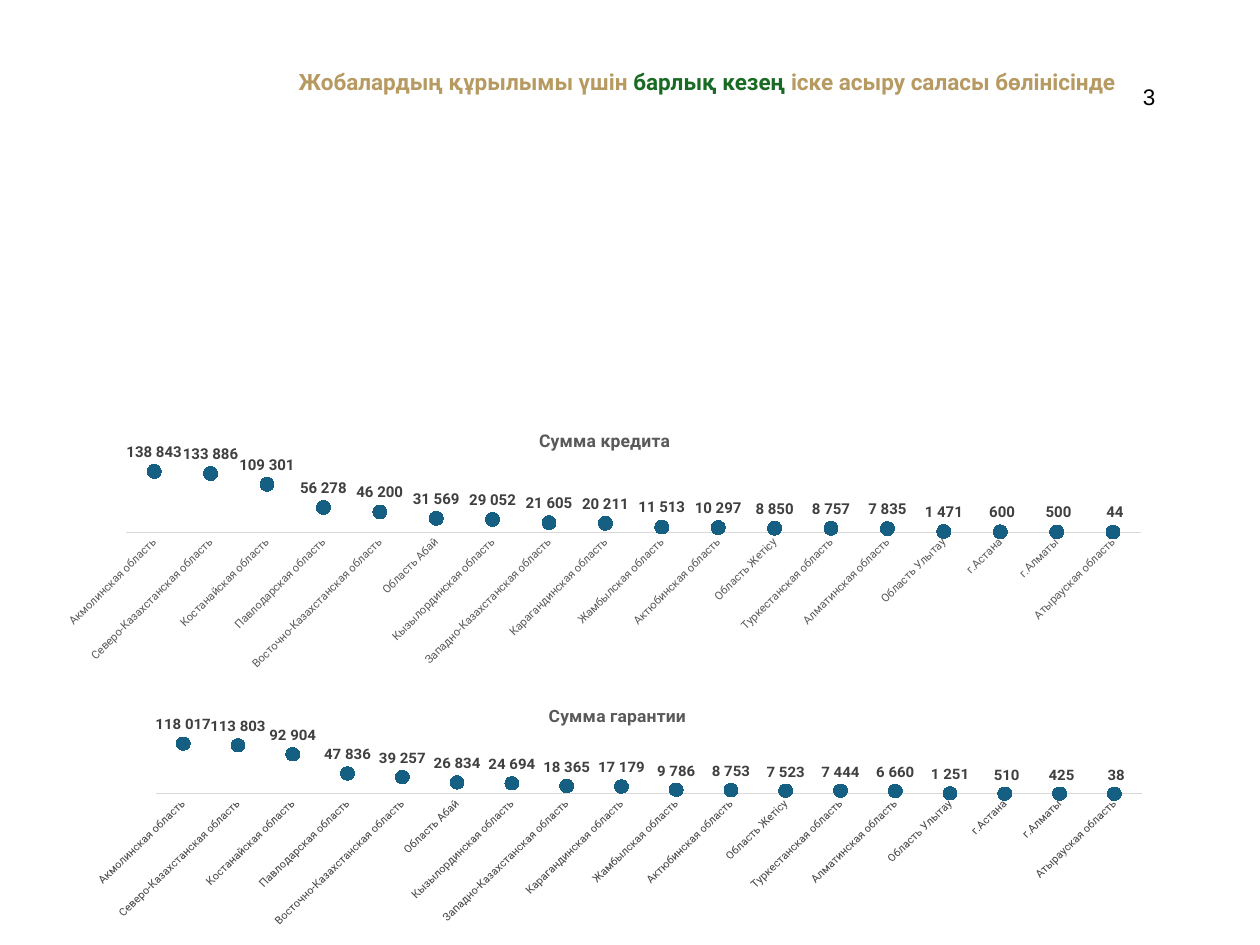
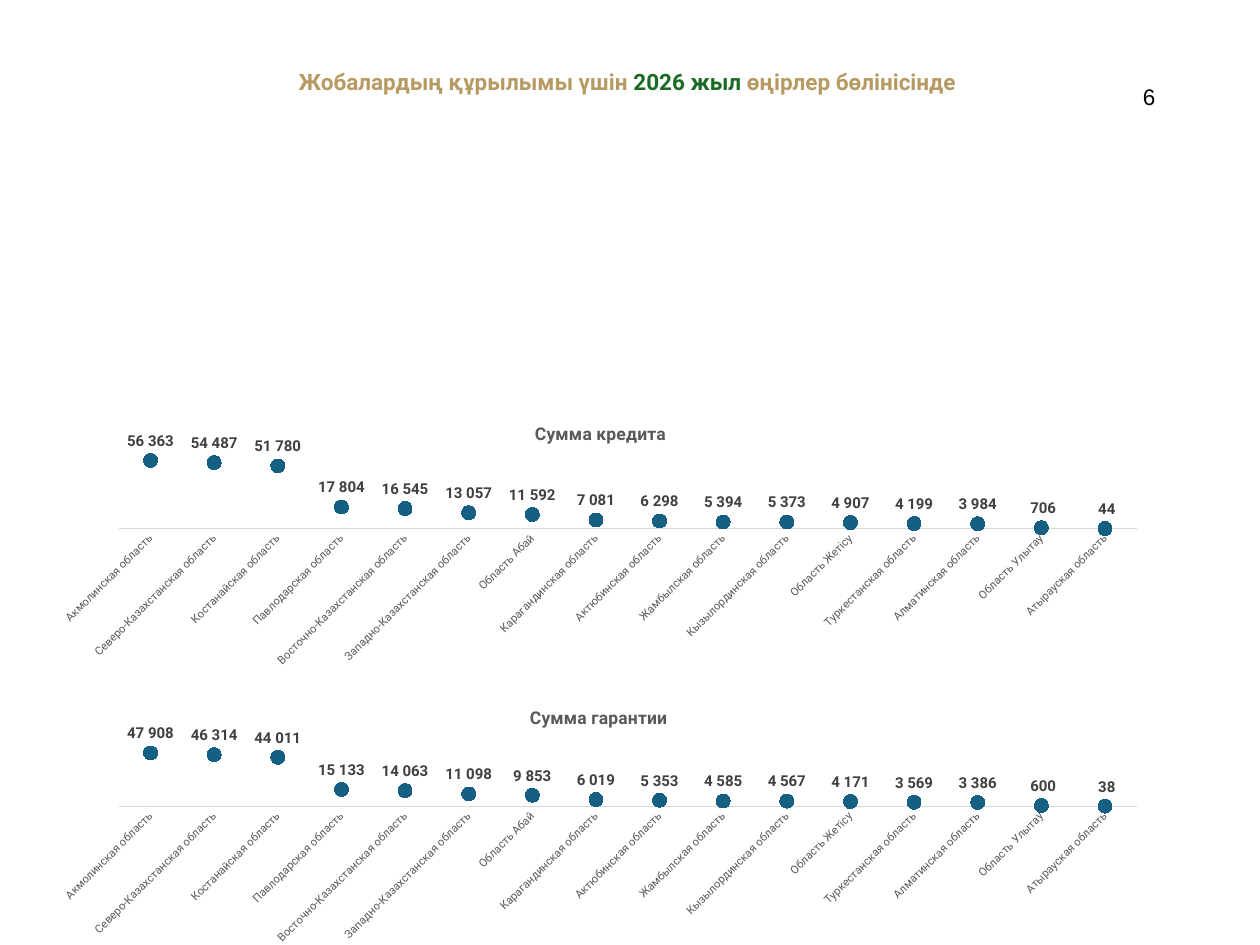
from dataclasses import dataclass

from pptx import Presentation
from pptx import oxml
from pptx import util as u
from pptx.chart.data import CategoryChartData
from pptx.dml.color import RGBColor
from pptx.enum import chart as ce
from pptx.oxml import ns

Pt = u.Pt
GOLD, GREEN, BLUE = "B69A61", "196B24", "156082"
BLACK, WHITE, GREY, DARK, PALE = "000000", "FFFFFF", "595959", "404040", "D9D9D9"
SANS, PLAIN = "Roboto", "Arial"
LEAD = "Жобалардың құрылымы үшін "
CREDIT, COVER = "Сумма кредита", "Сумма гарантии"
MILLION = 10 ** 6
EDGE = 0.02  # free margin in a chart, as a share of its frame


@dataclass
class Box:
    left: float
    top: float
    width: float
    height: float

    def emu(self) -> list:
        return [Pt(v) for v in (self.left, self.top, self.width, self.height)]


@dataclass
class Graph:
    title: str
    frame: Box
    drop: float  # from the frame top to the plot area
    peak: int  # top of the value axis, in millions


@dataclass
class Page:
    number: str
    accent: str
    tail: str
    rows: list  # region, credit, guarantee (millions)
    graphs: list


NUMBER = Box(907.2, 62.6, 226.8, 40.3)
HEAD = Box(231.8, 53.3, 795.6, 58.3)

ALL = [
    ("Акмолинская область", 138843, 118017),
    ("Северо-Казахстанская область", 133886, 113803),
    ("Костанайская область", 109301, 92904),
    ("Павлодарская область", 56278, 47836),
    ("Восточно-Казахстанская область", 46200, 39257),
    ("Область Абай", 31569, 26834),
    ("Кызылординская область", 29052, 24694),
    ("Западно-Казахстанская область", 21605, 18365),
    ("Карагандинская область", 20211, 17179),
    ("Жамбылская область", 11513, 9786),
    ("Актюбинская область", 10297, 8753),
    ("Область Жетiсу", 8850, 7523),
    ("Туркестанская область", 8757, 7444),
    ("Алматинская область", 7835, 6660),
    ("Область Улытау", 1471, 1251),
    ("г.Астана", 600, 510),
    ("г.Алматы", 500, 425),
    ("Атырауская область", 44, 38),
]
YEAR = [
    ("Акмолинская область", 56363, 47908),
    ("Северо-Казахстанская область", 54487, 46314),
    ("Костанайская область", 51780, 44011),
    ("Павлодарская область", 17804, 15133),
    ("Восточно-Казахстанская область", 16545, 14063),
    ("Западно-Казахстанская область", 13057, 11098),
    ("Область Абай", 11592, 9853),
    ("Карагандинская область", 7081, 6019),
    ("Актюбинская область", 6298, 5353),
    ("Жамбылская область", 5394, 4585),
    ("Кызылординская область", 5373, 4567),
    ("Область Жетiсу", 4907, 4171),
    ("Туркестанская область", 4199, 3569),
    ("Алматинская область", 3984, 3386),
    ("Область Улытау", 706, 600),
    ("Атырауская область", 44, 38),
]
PAGES = [
    Page("3", "барлық кезең ", "іске асыру саласы бөлінісінде", ALL, [
        Graph(CREDIT, Box(35.3, 332.6, 895.7, 208.1), 37.2, 160000),
        Graph(COVER, Box(59, 553.7, 871.9, 187.9), 35.1, 140000),
    ]),
    Page("6", "2026 жыл ", "өңірлер бөлінісінде", YEAR, [
        Graph(CREDIT, Box(32.4, 326.9, 895, 211), 37.9, 60000),
        Graph(COVER, Box(32.4, 554.4, 895, 201.6), 37.2, 60000),
    ]),
]


def color(code: str) -> RGBColor:
    return RGBColor.from_string(code)


def style(font, size: float, code: str, bold: bool = False, face: str = SANS) -> None:
    font.size, font.bold, font.name = Pt(size), bold, face
    font.color.rgb = color(code)


def paint(fill, code: str) -> None:
    fill.solid()
    fill.fore_color.rgb = color(code)


def write(slide, box: Box):
    """Add a text box and give its first paragraph."""
    frame = slide.shapes.add_textbox(*box.emu()).text_frame
    frame.word_wrap = True
    return frame.paragraphs[0]


def place(node, index: int, **parts: float) -> None:
    """Give a chart part a fixed place, as shares of the chart frame."""
    for old in node.findall(ns.qn("c:layout")):
        node.remove(old)
    modes = '<c:xMode val="edge"/><c:yMode val="edge"/>'
    sizes = "".join(f'<c:{k} val="{v:.4f}"/>' for k, v in parts.items())
    node.insert(index, oxml.parse_xml(
        f'<c:layout {ns.nsdecls("c")}><c:manualLayout>{modes}{sizes}'
        '</c:manualLayout></c:layout>'))


def draw(slide, graph: Graph, names: list, values: list) -> None:
    data = CategoryChartData()
    data.categories = names
    data.add_series("Series 1", [v * MILLION for v in values])
    box = graph.frame
    chart = slide.shapes.add_chart(ce.XL_CHART_TYPE.LINE_MARKERS, *box.emu(), data).chart
    style(chart.font, 10, BLACK)
    chart.has_legend = False
    root = chart._chartSpace.find(ns.qn("c:chart"))
    root.addnext(oxml.parse_xml(
        f'<c:spPr {ns.nsdecls("c", "a")}><a:solidFill><a:srgbClr val="{WHITE}"/>'
        '</a:solidFill><a:ln><a:noFill/></a:ln></c:spPr>'))

    # Title, centred near the top of the frame
    chart.has_title = True
    head = chart.chart_title.text_frame.paragraphs[0]
    head.text = graph.title
    style(head.font, 14, GREY, True)
    wide = 8 * len(graph.title) + 5
    place(root.find(ns.qn("c:title")), 1,
          x=(box.width - wide) / 2 / box.width, y=7.5 / box.height)

    # Plot area with its axis labels, down to the lower margin
    top = graph.drop / box.height
    place(root.find(ns.qn("c:plotArea")), 0,
          x=EDGE, y=top, w=1 - 2 * EDGE, h=1 - EDGE - top)

    # Axes
    axis = chart.category_axis
    axis.major_tick_mark = axis.minor_tick_mark = ce.XL_TICK_MARK.NONE
    axis.format.line.color.rgb = color(PALE)
    axis.format.line.width = Pt(0.75)
    style(axis.tick_labels.font, 9, GREY)
    axis._element.find(ns.qn("c:txPr")).find(ns.qn("a:bodyPr")).set("rot", "-2700000")
    scale = chart.value_axis
    scale.minimum_scale, scale.maximum_scale = 0, graph.peak * MILLION
    scale.has_major_gridlines = False
    scale.visible = False

    # Markers without a line, labelled in millions
    chart.plots[0].vary_by_categories = False
    series = chart.plots[0].series[0]
    series.smooth = False
    series.format.line.fill.background()
    mark = series.marker
    mark.style, mark.size = ce.XL_MARKER_STYLE.CIRCLE, 11
    paint(mark.format.fill, BLUE)
    paint(mark.format.line.fill, BLUE)
    labels = series.data_labels
    labels.show_value = True
    labels.position = ce.XL_LABEL_POSITION.ABOVE
    labels.number_format, labels.number_format_is_linked = "#\\ ##0,,", False
    style(labels.font, 12, DARK, True)


def build(deck, page: Page) -> None:
    slide = deck.slides.add_slide(deck.slide_layouts[6])
    paint(slide.background.fill, WHITE)

    # Page number
    par = write(slide, NUMBER)
    par.text = page.number
    style(par.font, 18, BLACK, face=PLAIN)

    # Heading with a green accent
    par = write(slide, HEAD)
    par.line_spacing = 0.9
    for words, code in ((LEAD, GOLD), (page.accent, GREEN), (page.tail, GOLD)):
        run = par.add_run()
        run.text = words
        style(run.font, 18, code, True)

    # One chart per sum
    names, *sums = zip(*page.rows)
    for graph, values in zip(page.graphs, sums):
        draw(slide, graph, names, values)


def main() -> None:
    deck = Presentation()
    deck.slide_width, deck.slide_height = Pt(1008), Pt(756)
    for page in PAGES:
        build(deck, page)
    deck.save("out.pptx")


if __name__ == "__main__":
    main()
